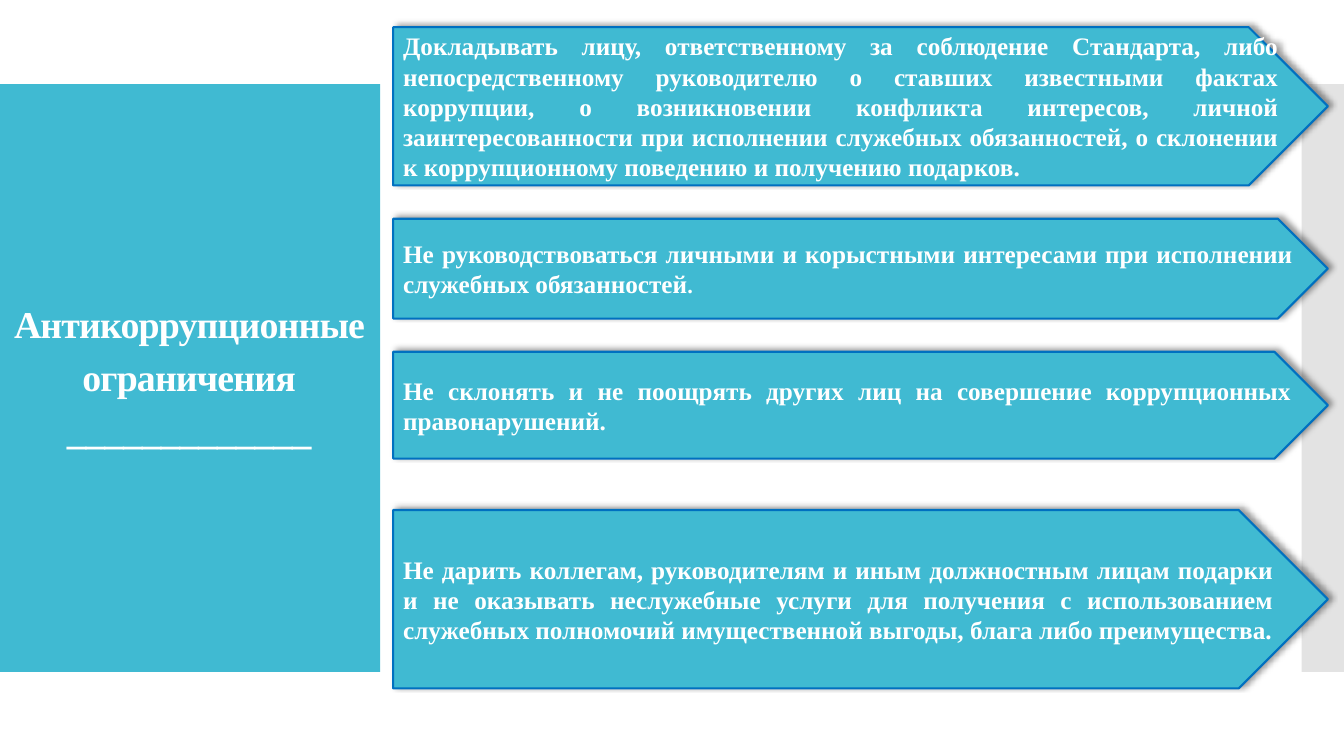
from lxml import etree
from pptx import Presentation
from pptx.dml.color import RGBColor
from pptx.enum.shapes import MSO_SHAPE
from pptx.enum.text import MSO_ANCHOR, PP_ALIGN
from pptx.oxml.ns import qn
from pptx.util import Inches, Pt

RECTANGLE, PENTAGON = MSO_SHAPE.RECTANGLE, MSO_SHAPE.PENTAGON
CENTER, JUSTIFY = PP_ALIGN.CENTER, PP_ALIGN.JUSTIFY

WIDTH, HEIGHT = 13.33, 7.5
TEAL, BLUE, GREY, WHITE, BLACK = "40BAD2", "0070C0", "C8C8C8", "FFFFFF", "000000"
FONT = "Times New Roman"

TITLE = [("Антикоррупционные ограничения", 27), ("\n", 27), ("_____________", 28)]

# top, height, runs of (text, size)
RULES = [
    (0.27, 1.57, [("Докладывать лицу, ответственному за соблюдение Стандарта, либо "
                   "непосредственному руководителю о ставших известными фактах "
                   "коррупции, о возникновении конфликта интересов, личной "
                   "заинтересованности при исполнении служебных обязанностей, "
                   "о склонении к коррупционному поведению и получению подарков.", 18)]),
    (2.17, 0.99, [("Не руководствоваться личными и корыстными интересами при "
                   "исполнении служебных обязанностей", 18), (".", 16)]),
    (3.49, 1.06, [("Не склонять и не поощрять других лиц на совершение "
                   "коррупционных правонарушений.", 18)]),
    (5.06, 1.77, [("Не дарить коллегам, руководителям и иным должностным лицам "
                   "подарки и не оказывать неслужебные услуги для получения "
                   "с использованием служебных полномочий имущественной выгоды, "
                   "блага либо преимущества.", 18)]),
]

BAND_TOP, BAND_HEIGHT = HEIGHT / 9, HEIGHT * 7 / 9
PANEL_WIDTH, STRIP_WIDTH = 3.77, 0.42
ARROW_LEFT, ARROW_WIDTH = 3.9, 9.27


def color(value):
    return RGBColor.from_string(value)


def add_alpha(color_element, percent):
    etree.SubElement(color_element, qn("a:alpha"), val=str(percent * 1000))


def add_block(page, kind, place, fill):
    block = page.shapes.add_shape(kind, *map(Inches, place))
    block.shadow.inherit = False
    block.fill.solid()
    block.fill.fore_color.rgb = color(fill)
    block.line.fill.background()
    return block


def add_shadow(block):
    """Soft black shadow cast up and to the right."""
    effects = block._element.spPr.find(qn("a:effectLst"))
    shadow = etree.SubElement(effects, qn("a:outerShdw"), blurRad=str(Pt(4)),
                              dist=str(Pt(3)), dir=str(315 * 60000),
                              algn="bl", rotWithShape="0")
    add_alpha(etree.SubElement(shadow, qn("a:srgbClr"), val=BLACK), 40)


def write(box, runs, align, line_spacing=1.0, tracking=None):
    """Fill the box with one paragraph; tracking is in hundredths of a point."""
    frame = box.text_frame
    frame.word_wrap = True
    frame.vertical_anchor = MSO_ANCHOR.MIDDLE
    para = frame.paragraphs[0]
    para.alignment, para.line_spacing = align, line_spacing
    for text, size in runs:
        if text == "\n":
            para.add_line_break()
            continue
        span = para.add_run()
        span.text = text
        for name, value in {"name": FONT, "size": Pt(size), "bold": True}.items():
            setattr(span.font, name, value)
        span.font.color.rgb = color(WHITE)
        if tracking is not None:
            span._r.get_or_add_rPr().set("spc", str(tracking))


def main():
    deck = Presentation()
    deck.slide_width, deck.slide_height = Inches(WIDTH), Inches(HEIGHT)
    page = deck.slides.add_slide(deck.slide_layouts[6])

    add_block(page, RECTANGLE, (0, BAND_TOP, PANEL_WIDTH, BAND_HEIGHT), TEAL)
    strip = add_block(page, RECTANGLE,
                      (WIDTH - STRIP_WIDTH, BAND_TOP, STRIP_WIDTH, BAND_HEIGHT), GREY)
    add_alpha(strip._element.spPr.find(qn("a:solidFill"))[0], 50)

    title = page.shapes.add_textbox(*map(Inches, (0, 1.7, 3.75, 4.01)))
    write(title, TITLE, CENTER, line_spacing=1.15, tracking=-60)

    for top, height, runs in RULES:
        arrow = add_block(page, PENTAGON, (ARROW_LEFT, top, ARROW_WIDTH, height), TEAL)
        arrow.line.color.rgb = color(BLUE)
        arrow.line.width = Pt(1.5)
        add_shadow(arrow)
        write(arrow, runs, JUSTIFY)

    deck.save("out.pptx")


if __name__ == "__main__":
    main()
